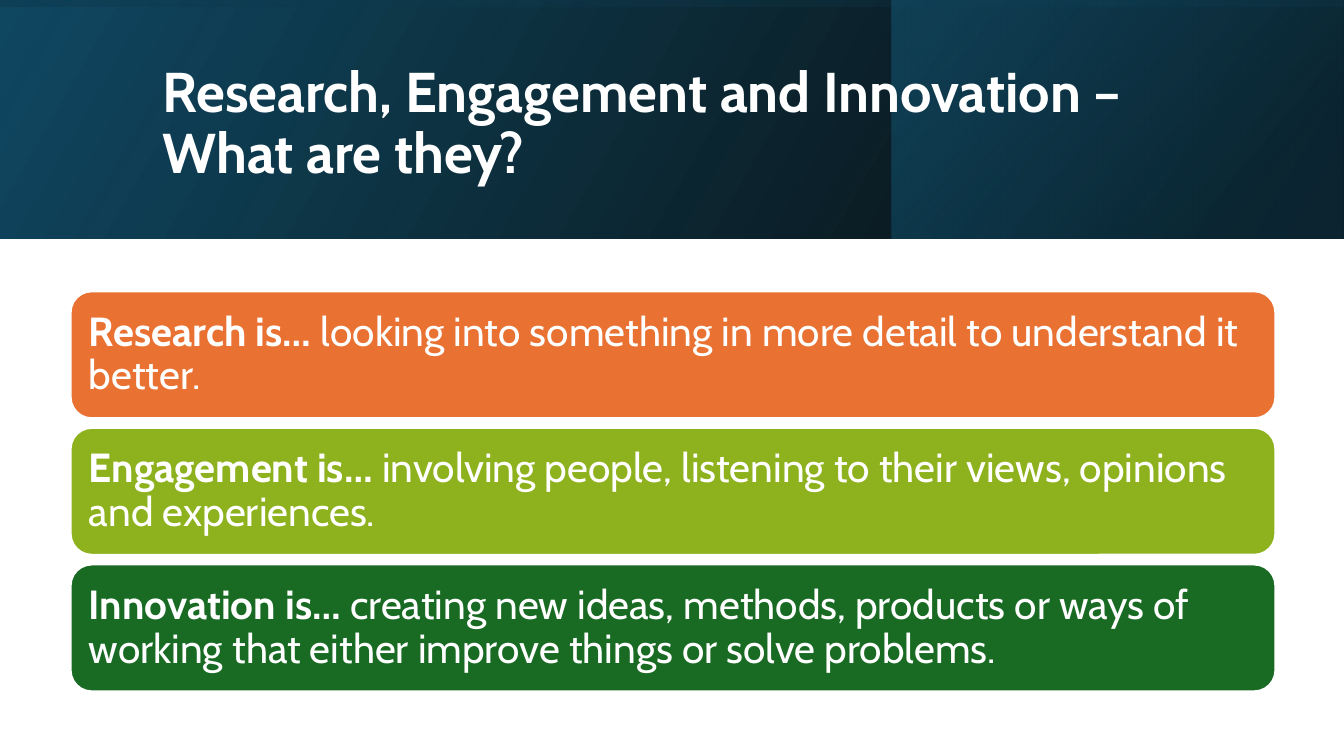
from dataclasses import dataclass

from lxml import etree
from pptx import Presentation
from pptx import util as u
from pptx.dml.color import RGBColor
from pptx.enum import shapes, text
from pptx.oxml.ns import qn


@dataclass(frozen=True)
class Theme:
    font: str = "Cabin"
    white: str = "FFFFFF"
    black: str = "000000"
    navy: str = "104862"
    deep: str = "0B3041"
    teal: str = "156082"
    orange: str = "E97132"
    lime: str = "8EB21E"
    green: str = "196B24"
    head: float = 40
    body: float = 29
    edge: float = 1.5
    lines: float = 0.9


class Deck:
    def __init__(self, theme):
        self.theme = theme
        self.file = Presentation()
        self.file.slide_width = u.Inches(13.33)
        self.file.slide_height = u.Inches(7.5)
        self.slide = self.file.slides.add_slide(self.file.slide_layouts[5])

    def shape(self, kind, box):
        shape = self.slide.shapes.add_shape(kind, *map(u.Inches, box))
        shape.shadow.inherit = False
        return shape

    def shade(self, box, stops, angle, turn=0):
        """Add a mirrored gradient panel; stops are (place, colour, opacity %)."""
        panel = self.shape(shapes.MSO_SHAPE.RECTANGLE, box)
        panel.line.fill.background()
        panel.rotation = turn
        panel._element.spPr.find(qn("a:xfrm")).set("flipH", "1")
        panel.fill.gradient()
        panel.fill.gradient_angle = 360 - angle
        for stop, (place, colour, alpha) in zip(panel.fill.gradient_stops, stops):
            stop.position = place / 100
            stop.color.rgb = RGBColor.from_string(colour)
        tones = panel._element.spPr.iter(qn("a:srgbClr"))
        for tone, (place, colour, alpha) in zip(tones, stops):
            etree.SubElement(tone, qn("a:alpha"), val=str(alpha * 1000))

    def style(self, frame, size):
        """Format the single paragraph of a text frame and return it."""
        frame.word_wrap = True
        frame.auto_size = text.MSO_AUTO_SIZE.NONE
        frame.vertical_anchor = text.MSO_ANCHOR.MIDDLE
        para = frame.paragraphs[0]
        para.alignment = text.PP_ALIGN.LEFT
        para.line_spacing = self.theme.lines
        para.font.name = self.theme.font
        para.font.size = u.Pt(size)
        para.font.color.rgb = RGBColor.from_string(self.theme.white)
        return para

    def title(self, words, box):
        title = self.slide.shapes.title
        title.left, title.top, title.width, title.height = map(u.Inches, box)
        title.text_frame.text = words
        self.style(title.text_frame, self.theme.head).font.bold = True
        self.slide.shapes._spTree.append(title._element)  # in front of the panels

    def card(self, term, words, colour, box):
        card = self.shape(shapes.MSO_SHAPE.ROUNDED_RECTANGLE, box)
        card.fill.solid()
        card.fill.fore_color.rgb = RGBColor.from_string(colour)
        card.line.color.rgb = RGBColor.from_string(self.theme.white)
        card.line.width = u.Pt(self.theme.edge)
        frame = card.text_frame
        frame.margin_left = frame.margin_right = u.Inches(0.12)
        frame.margin_top = frame.margin_bottom = u.Inches(0.12)
        para = self.style(frame, self.theme.body)
        for part, bold in ((term, True), (" " + words, False)):
            run = para.add_run()
            run.text = part
            run.font.bold = bold


def main():
    look = Theme()
    deck = Deck(look)
    wide, band = 13.33, 2.37
    deck.shade((0, 0, wide, band),
               [(0, look.black, 96), (100, look.navy, 100)], 330)
    deck.shade((8.84, 0, 4.48, band),
               [(19, look.deep, 68), (100, look.teal, 48)], 320)
    deck.shade(((wide - band) / 2, (band - wide) / 2, band, wide),
               [(23, look.navy, 16), (99, look.black, 45)], 350, turn=270)
    deck.title("Research, Engagement and Innovation – What are they?",
               (1.51, 0.38, 10.63, 1.72))

    cards = [
        ("Research is…",
         "looking into something in more detail to understand it better.",
         look.orange),
        ("Engagement is…",
         "involving people, listening to their views, opinions and experiences.",
         look.lime),
        ("Innovation is…",
         "creating new ideas, methods, products or ways of working that either "
         "improve things or solve problems.",
         look.green),
    ]
    top, step = 2.89, 1.355
    for row, (term, words, colour) in enumerate(cards):
        deck.card(term, words, colour, (0.7, top + row * step, 11.95, 1.26))
    deck.file.save("out.pptx")


if __name__ == "__main__":
    main()
